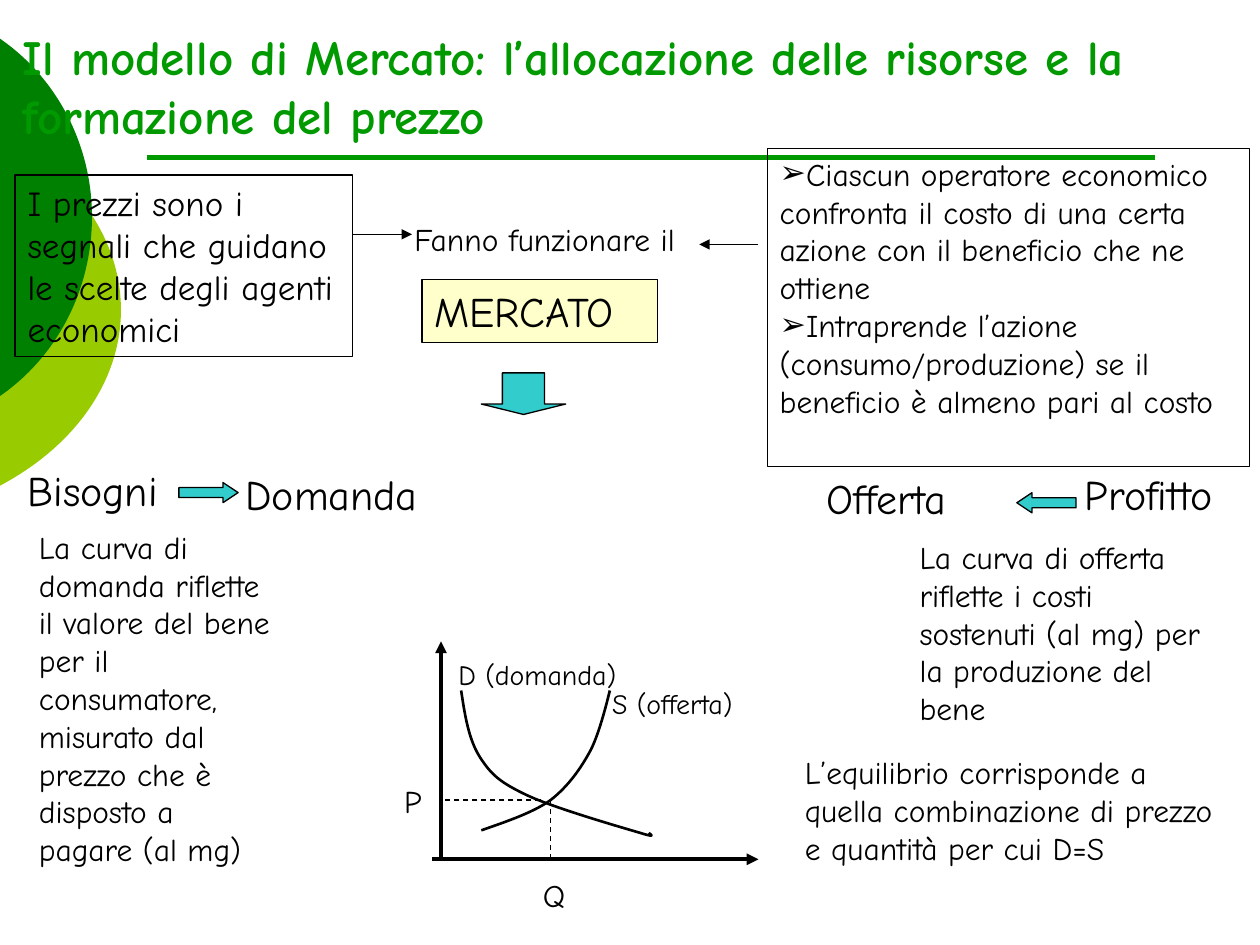
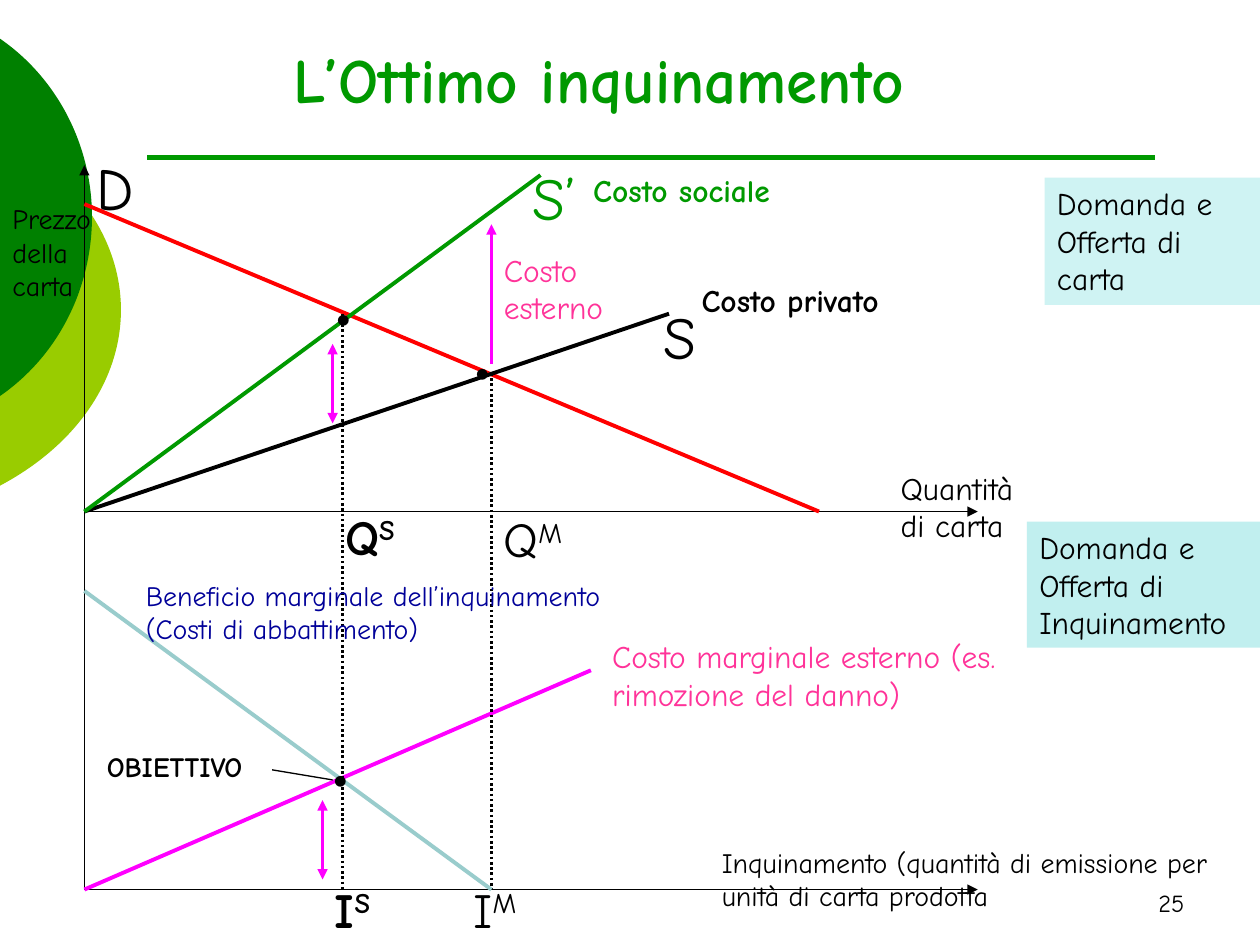
from dataclasses import dataclass, field
from typing import Any, Optional

import lxml.etree
import pptx
import pptx.dml.color
import pptx.enum.dml
import pptx.enum.shapes
import pptx.enum.text
import pptx.oxml.ns
import pptx.util

Inches = pptx.util.Inches
qn = pptx.oxml.ns.qn
SHAPES = pptx.enum.shapes.MSO_SHAPE
DASHES = pptx.enum.dml.MSO_LINE
ANCHORS = pptx.enum.text.MSO_ANCHOR
ALIGNMENTS = pptx.enum.text.PP_ALIGN
AUTO_SIZES = pptx.enum.text.MSO_AUTO_SIZE

FONT = "Comic Neue"
BLACK, GREEN, DARK_GREEN, LIME = "000000", "009900", "008000", "99CC00"
TEAL, PALE_TEAL, YELLOW = "33CCCC", "99CCCC", "FFFF99"
RED, MAGENTA, PINK, NAVY = "FF0000", "FF00FF", "FF3399", "000099"

Point = tuple[float, float]


@dataclass
class Label:
    text: str
    left: float
    top: float
    width: float
    height: float
    size: float = 18
    color: str = BLACK
    bold: bool = False
    wrap: bool = True
    grow: bool = True
    superscript: str = ""
    bullet: str = ""
    frame: dict[str, Any] = field(default_factory=dict)
    paragraph: dict[str, Any] = field(default_factory=dict)


@dataclass
class Box:
    label: Label
    fill: Optional[str] = None
    opacity: int = 100
    outlined: bool = True


@dataclass
class Line:
    start: Point
    end: Point
    color: str = BLACK
    width: float = 0.75
    dash: Any = None
    head: bool = False
    tail: bool = False


@dataclass
class BlockArrow:
    kind: Any
    left: float
    top: float
    width: float
    height: float
    head_length: float
    rotation: float = 0


@dataclass
class Curve:
    points: list[Point]
    fill: Optional[str] = None
    corners: tuple[Point, ...] = ()


def rgb(color: str) -> pptx.dml.color.RGBColor:
    return pptx.dml.color.RGBColor.from_string(color)


def add_xml(parent: Any, tag: str, **attributes: str) -> None:
    lxml.etree.SubElement(parent, qn(tag), **attributes)


def set_attributes(target: Any, values: dict[str, Any]) -> None:
    for name, value in values.items():
        setattr(target, name, value)


def paint(shape: Any, fill: Optional[str], line_width: float, opacity: int = 100) -> None:
    shape.shadow.inherit = False
    if fill:
        shape.fill.solid()
        shape.fill.fore_color.rgb = rgb(fill)
        if opacity < 100:
            color_element = shape._element.spPr.find(".//" + qn("a:srgbClr"))
            add_xml(color_element, "a:alpha", val=str(opacity * 1000))
    else:
        shape.fill.background()
    if line_width:
        shape.line.color.rgb = rgb(BLACK)
        shape.line.width = pptx.util.Pt(line_width)
    else:
        shape.line.fill.background()


def write_text(shape: Any, label: Label) -> None:
    text_frame = shape.text_frame
    set_attributes(text_frame, {
        "word_wrap": label.wrap,
        "vertical_anchor": ANCHORS.TOP,
        "auto_size": AUTO_SIZES.SHAPE_TO_FIT_TEXT if label.grow else AUTO_SIZES.NONE,
        **label.frame,
    })
    for index, text in enumerate(label.text.split("\n")):
        paragraph = text_frame.add_paragraph() if index else text_frame.paragraphs[0]
        set_attributes(paragraph, {"alignment": ALIGNMENTS.LEFT, **label.paragraph})
        if label.bullet:
            properties = paragraph._p.get_or_add_pPr()
            add_xml(properties, "a:buFont", typeface=FONT)
            add_xml(properties, "a:buChar", char=label.bullet)
        for part in filter(None, (text, label.superscript)):
            run = paragraph.add_run()
            run.text = part
            set_attributes(run.font, {
                "name": FONT, "size": pptx.util.Pt(label.size), "bold": label.bold,
            })
            run.font.color.rgb = rgb(label.color)
            if part is label.superscript:
                run._r.get_or_add_rPr().set("baseline", "30000")


def place(item: Any) -> tuple[int, int, int, int]:
    return Inches(item.left), Inches(item.top), Inches(item.width), Inches(item.height)


def draw_label(slide: Any, label: Label) -> None:
    write_text(slide.shapes.add_textbox(*place(label)), label)


def draw_box(slide: Any, box: Box) -> None:
    shape = slide.shapes.add_shape(SHAPES.RECTANGLE, *place(box.label))
    paint(shape, box.fill, 0.75 if box.outlined else 0, box.opacity)
    write_text(shape, box.label)


def draw_line(slide: Any, line: Line) -> None:
    connector = slide.shapes.add_connector(
        pptx.enum.shapes.MSO_CONNECTOR.STRAIGHT,
        *(Inches(value) for value in line.start + line.end))
    connector.line.color.rgb = rgb(line.color)
    connector.line.width = pptx.util.Pt(line.width)
    if line.dash:
        connector.line.dash_style = line.dash
    line_element = connector.line._get_or_add_ln()
    for shown, tag in ((line.head, "a:headEnd"), (line.tail, "a:tailEnd")):
        if shown:
            add_xml(line_element, tag, type="triangle")
    add_xml(connector._element.spPr, "a:effectLst")


def draw_block_arrow(slide: Any, arrow: BlockArrow) -> None:
    shape = slide.shapes.add_shape(arrow.kind, *place(arrow))
    shape.adjustments[0], shape.adjustments[1] = 0.5, arrow.head_length
    shape.rotation = arrow.rotation
    paint(shape, TEAL, 0.75)


def draw_curve(slide: Any, curve: Curve) -> None:
    start, *controls = [(Inches(x), Inches(y)) for x, y in curve.points]
    builder = slide.shapes.build_freeform(*start, scale=1.0)
    for x, y in curve.corners:
        builder.move_to(Inches(x), Inches(y))
    if curve.corners:
        builder.move_to(*start)
    builder.add_line_segments(controls, close=bool(curve.fill))
    shape = builder.convert_to_shape()
    outline = shape._element.spPr.find(".//" + qn("a:path"))
    for unused_move in outline.findall(qn("a:moveTo"))[:-1]:
        outline.remove(unused_move)
    segments = outline.findall(qn("a:lnTo"))
    for first in range(0, len(segments), 3):
        bezier = lxml.etree.Element(qn("a:cubicBezTo"))
        segments[first].addprevious(bezier)
        for segment in segments[first:first + 3]:
            bezier.append(segment[0])
            outline.remove(segment)
    paint(shape, curve.fill, 0 if curve.fill else 1.5)


DRAWERS = {Label: draw_label, Box: draw_box, Line: draw_line,
           BlockArrow: draw_block_arrow, Curve: draw_curve}

DECORATION = [
    Curve([(-0.01, 1.06), (0.6, 1.38), (0.96, 1.9), (0.96, 2.46),
           (0.96, 3.02), (0.6, 3.54), (-0.01, 3.86)], LIME, ((-3.54, 0.75), (0.96, 4.17))),
    Curve([(-0.01, 0.3), (0.46, 0.62), (0.73, 1.16), (0.73, 1.72),
           (0.73, 2.29), (0.46, 2.83), (-0.01, 3.15)], DARK_GREEN, ((-2.65, 0), (0.73, 3.45))),
    Line((1.17, 1.25), (9.17, 1.25), GREEN, 3),
]


def title(text: str, left: float, top: float, width: float, height: float, size: float,
          anchor: Any, alignment: Any) -> Label:
    return Label(text, left, top, width, height, size, GREEN, bold=True, grow=False,
                 frame={"vertical_anchor": anchor}, paragraph={"alignment": alignment})


def market_items() -> list[Any]:
    origin_x, origin_y = 3.5, 6.82
    equilibrium = (4.37, 6.35)
    headings = [Label(text, left, top, width, 0.5, 24, wrap=False) for text, left, top, width in (
        ("Bisogni", 0.12, 3.64, 1.3), ("Domanda", 1.85, 3.67, 1.6),
        ("Offerta", 6.46, 3.7, 1.49), ("Profitto", 8.51, 3.67, 1.47))]
    return [
        Box(Label("I prezzi sono i segnali che guidano le scelte degli agenti economici",
                  0.12, 1.39, 2.68, 1.44, 20)),
        Box(Label("Ciascun operatore economico confronta il costo di una certa azione con il "
                  "beneficio che ne ottiene\nIntraprende l’azione (consumo/produzione) se il "
                  "beneficio è almeno pari al costo", 6.09, 1.18, 3.83, 2.52, bullet="➢")),
        Box(Label("MERCATO", 3.35, 2.22, 1.87, 0.5, 24, wrap=False), YELLOW, 50),
        Label("Fanno funzionare il", 3.19, 1.7, 2.49, 0.4, wrap=False),
        BlockArrow(SHAPES.DOWN_ARROW, 3.82, 2.96, 0.67, 0.33, 0.25),
        Line((3.43, origin_y), (6.02, origin_y), width=2.25, tail=True),
        Line((origin_x, origin_y), (origin_x, 5.09), width=2.25, tail=True),
        Curve([(3.66, 5.48), (3.69, 5.68), (3.72, 5.87), (3.81, 6.01), (3.9, 6.15),
               (3.97, 6.21), (4.18, 6.31), (4.39, 6.41), (4.91, 6.56), (5.08, 6.61),
               (5.24, 6.66), (5.14, 6.61), (5.15, 6.61)]),
        Curve([(3.82, 6.59), (4.02, 6.52), (4.23, 6.45), (4.37, 6.35), (4.51, 6.24),
               (4.61, 6.1), (4.69, 5.95), (4.76, 5.81), (4.82, 5.56), (4.84, 5.48)]),
        Label("S (offerta)", 4.76, 5.4, 1.39, 0.37, 16, wrap=False),
        Label("D (domanda)", 3.54, 5.17, 1.5, 0.37, 16, wrap=False),
        Line(equilibrium, (equilibrium[0], origin_y), dash=DASHES.DASH),
        Line((4.29, equilibrium[1]), (origin_x, equilibrium[1]), dash=DASHES.DASH),
        Label("P", 3.11, 6.16, 0.34, 0.4, wrap=False),
        Label("Q", 4.21, 6.9, 0.42, 0.4, wrap=False),
        title("Il modello di Mercato: l’allocazione delle risorse e la formazione del prezzo",
              0.08, 0.05, 9.73, 1.25, 28, ANCHORS.MIDDLE, ALIGNMENTS.LEFT),
        Line((2.8, 1.86), (3.27, 1.86), tail=True),
        Line((6.02, 1.94), (5.55, 1.94), tail=True),
        *headings,
        BlockArrow(SHAPES.RIGHT_ARROW, 1.42, 3.83, 0.47, 0.16, 0.75),
        BlockArrow(SHAPES.RIGHT_ARROW, 8.07, 3.91, 0.47, 0.16, 0.75, 180),
        Label("La curva di domanda riflette il valore del bene per il consumatore, misurato "
              "dal prezzo che è disposto a pagare (al mg)", 0.21, 4.14, 2.05, 3.13),
        Label("La curva di offerta riflette i costi sostenuti (al mg) per la produzione del bene",
              7.2, 4.22, 2.52, 1.62),
        Label("L’equilibrio corrisponde a quella combinazione di prezzo e quantità per cui D=S",
              6.29, 5.93, 3.47, 1.31),
    ]


def pollution_items() -> list[Any]:
    axis_x, axis_end, paper_y, pollution_y = 0.67, 7.76, 4.06, 7.06
    social_x, market_x = 2.72, 3.9
    paper_origin, pollution_origin = (axis_x, paper_y), (axis_x, pollution_y)
    dots = [Label("•", left, top, 0.42, 0.67, 34, wrap=False)
            for left, top in ((3.66, 2.57), (2.56, 2.14), (2.53, 5.8))]
    quantities = [
        Label(letter, left, top, width, 0.57, 28, bold=mark == "S", wrap=False, superscript=mark)
        for letter, mark, left, top, width in (
            ("Q", "M", 3.9, 3.99, 0.78), ("Q", "S", 2.64, 3.97, 0.73),
            ("I", "M", 3.66, 6.93, 0.65), ("I", "S", 2.56, 6.93, 0.6))]
    gaps = [Line((x, top), (x, top + 0.63), MAGENTA, 1.5, head=True, tail=True)
            for x, top in ((2.64, 2.73), (2.56, 6.35))]
    return [
        Label("25", 7.17, 6.83, 2.33, 0.5, 14, grow=False,
              frame={"vertical_anchor": ANCHORS.BOTTOM},
              paragraph={"alignment": ALIGNMENTS.RIGHT}),
        Line(pollution_origin, (axis_x, 1.31), tail=True),
        Line(pollution_origin, (axis_end, pollution_y), tail=True),
        Line(paper_origin, (axis_end, paper_y), tail=True),
        Line((axis_x, 1.62), (6.5, paper_y), RED, 2.25),
        Line(paper_origin, (5.31, 2.49), BLACK, 2.25),
        Line(paper_origin, (4.29, 1.39), GREEN, 2.25),
        Label("S’", 4.13, 1.23, 0.71, 0.67, 34, GREEN),
        Label("S", 5.17, 2.33, 0.46, 0.67, 34),
        Label("D", 0.67, 1.15, 0.54, 0.67, 34, wrap=False),
        Label("Costo esterno", 3.9, 1.94, 1.26, 0.7, color=PINK),
        Line((market_x, 2.89), (market_x, 1.78), MAGENTA, 1.5, tail=True),
        Label("Costo privato", 5.47, 2.18, 1.97, 0.4, bold=True),
        Label("Costo sociale", 4.61, 1.31, 1.89, 0.4, color=GREEN, bold=True),
        Line(pollution_origin, (4.69, 5.32), MAGENTA, 2.25),
        Line((market_x, 2.96), (market_x, pollution_y), width=1.5, dash=DASHES.ROUND_DOT),
        Line((social_x, 2.49), (social_x, pollution_y), width=1.5, dash=DASHES.ROUND_DOT),
        Line((axis_x, 4.69), (market_x, pollution_y), PALE_TEAL, 2.25),
        *dots,
        Label("Quantità di carta", 7.05, 3.67, 1.18, 1.01),
        Label("Inquinamento (quantità di emissione per unità di carta prodotta",
              5.63, 6.66, 4.25, 0.64, 16),
        Label("Prezzo della carta", 0, 1.55, 1.05, 0.9, 16),
        Box(Label("Domanda e Offerta di carta", 8.29, 1.41, 1.75, 1.01), TEAL, 23, False),
        Box(Label("Domanda e Offerta di Inquinamento", 8.15, 4.14, 1.85, 1), TEAL, 30, False),
        Label("Costo marginale esterno (es. rimozione del danno)",
              4.76, 5.01, 3.39, 0.7, color=PINK),
        Label("Beneficio marginale dell’inquinamento (Costi di abbattimento)",
              1.06, 4.54, 4.41, 0.64, 16, NAVY),
        *quantities,
        Label("OBIETTIVO", 0.75, 5.9, 1.55, 0.37, 16, bold=True, wrap=False),
        Line((2.16, 6.11), (2.64, 6.19)),
        *gaps,
        title("L’Ottimo inquinamento ", 0.84, 0.27, 8, 0.71, 36, ANCHORS.TOP, ALIGNMENTS.CENTER),
    ]


def draw_items(slide: Any, items: list[Any]) -> None:
    for item in items:
        DRAWERS[type(item)](slide, item)


def main() -> None:
    presentation = pptx.Presentation()
    set_attributes(presentation, {"slide_width": Inches(10), "slide_height": Inches(7.5)})
    layout = presentation.slide_layouts[6]
    slides = [presentation.slides.add_slide(layout) for _ in range(2)]
    draw_items(slides[0], DECORATION)
    for number, shape in enumerate(list(slides[0].shapes), start=101):
        shape._element.xpath(".//p:cNvPr")[0].set("id", str(number))
        layout.shapes._spTree.append(shape._element)
    for slide, items in zip(slides, (market_items(), pollution_items())):
        draw_items(slide, items)
    presentation.save("out.pptx")


if __name__ == "__main__":
    main()
